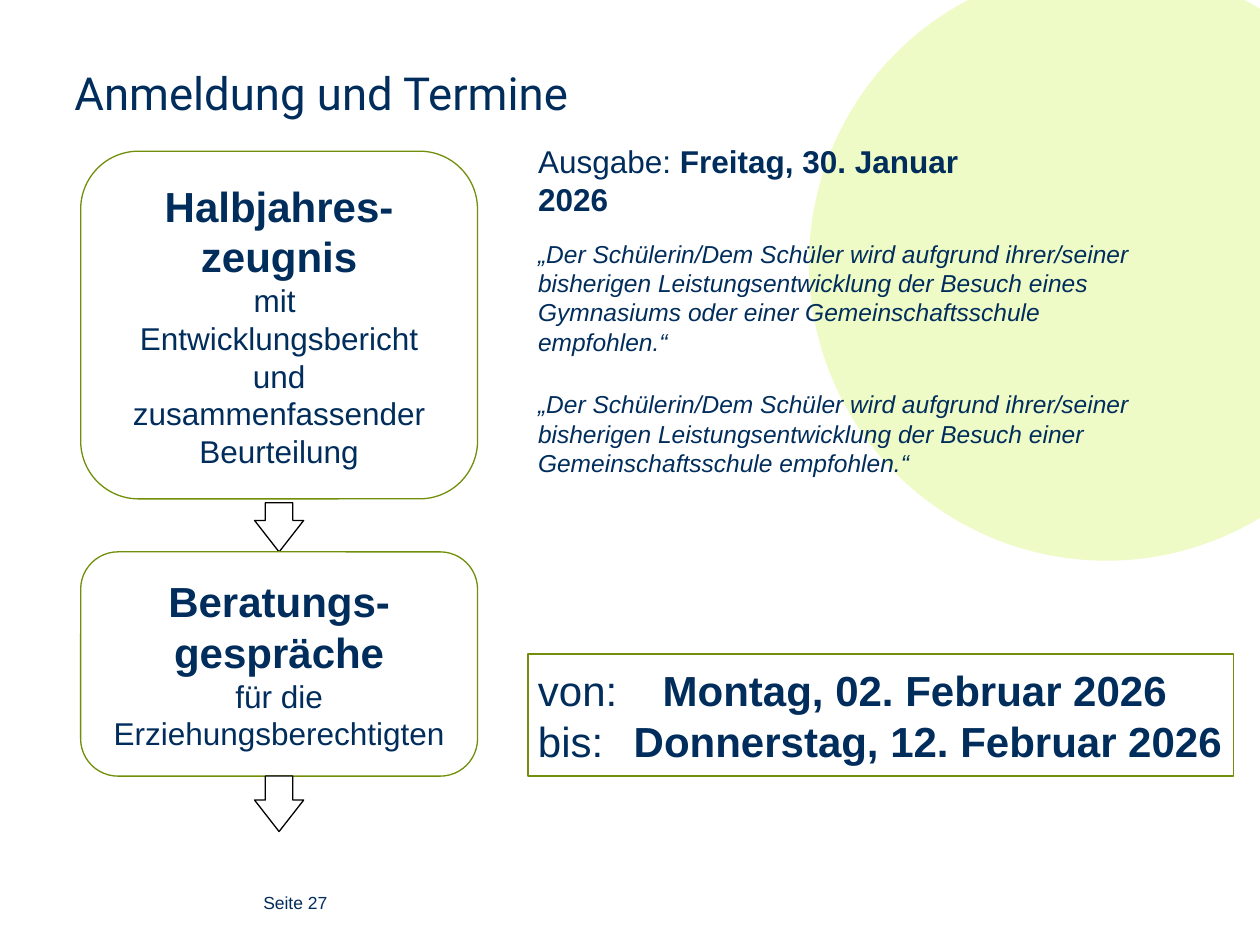
from lxml import etree
from pptx import Presentation
from pptx.dml.color import RGBColor
from pptx.enum import shapes, text
from pptx.oxml.ns import qn
from pptx.util import Inches, Pt

NAVY, GREEN, LIME, WHITE, BLACK = "002D5B", "718F0A", "EFFBC6", "FFFFFF", "000000"
KIND = shapes.MSO_SHAPE
LEFT, CENTER = text.PP_ALIGN.LEFT, text.PP_ALIGN.CENTER


def color(value):
    return RGBColor.from_string(value)


def add_figure(page, kind, box, fill, line=None):
    shape = page.shapes.add_shape(kind, *map(Inches, box))
    shape.shadow.inherit = False
    shape.fill.solid()
    shape.fill.fore_color.rgb = color(fill)
    if line:
        shape.line.color.rgb = color(line)
        shape.line.width = Pt(0.75)
    else:
        shape.line.fill.background()
    return shape


def add_label(page, box):
    return page.shapes.add_textbox(*map(Inches, box))


def prepare_frame(shape, inset=(0.08, 0.08), anchor=text.MSO_ANCHOR.MIDDLE):
    frame = shape.text_frame
    frame.word_wrap = True
    frame.vertical_anchor = anchor
    frame.margin_left = frame.margin_right = Inches(inset[0])
    frame.margin_top = frame.margin_bottom = Inches(inset[1])
    return frame


def next_para(frame, align=LEFT, tab=None):
    para = frame.paragraphs[0]
    if para.runs:
        para = frame.add_paragraph()
    para.alignment = align
    if tab:
        stops = etree.SubElement(para._p.get_or_add_pPr(), qn("a:tabLst"))
        etree.SubElement(stops, qn("a:tab"), pos=str(Inches(tab)), algn="l")
    return para


def write(para, words, size=18, bold=False, italic=False, font="Arial"):
    for index, line in enumerate(words.split("\n")):
        if index:
            para.add_line_break()
        span = para.add_run()
        span.text = line
        span.font.name = font
        span.font.size = Pt(size)
        span.font.bold = bold
        span.font.italic = italic
        span.font.color.rgb = color(NAVY)


def add_title(page, box):
    frame = prepare_frame(add_label(page, box), (0, 0), text.MSO_ANCHOR.TOP)
    para = next_para(frame)
    para.line_spacing = 0.85
    write(para, "Anmeldung und Termine", size=26, font="Roboto")


def add_step(page, box, heading, detail, inset, arrow_gap, arrow_height):
    left, top, width, height = box
    frame = prepare_frame(add_figure(page, KIND.ROUNDED_RECTANGLE, box, WHITE, GREEN), (0.04, inset))
    write(next_para(frame, CENTER), heading, size=24, bold=True)
    write(next_para(frame, CENTER), detail)
    arrow_width = 0.39
    arrow_box = (left + (width - arrow_width) / 2, top + height + arrow_gap, arrow_width, arrow_height)
    arrow = add_figure(page, KIND.DOWN_ARROW, arrow_box, WHITE, BLACK)
    arrow.adjustments[0] = 0.56
    arrow.adjustments[1] = 0.64


def add_issue_date(page, box):
    para = next_para(prepare_frame(add_label(page, box)))
    write(para, "Ausgabe: ")
    write(para, "Freitag, 30. Januar 2026", bold=True)


def add_quotes(page, box, pitch, schools):
    left, top, width, height = box
    for index, school in enumerate(schools):
        frame = prepare_frame(add_label(page, (left, top + index * pitch, width, height)))
        words = (
            "„Der Schülerin/Dem Schüler wird aufgrund ihrer/seiner bisherigen "
            f"Leistungsentwicklung der Besuch {school} empfohlen.“"
        )
        write(next_para(frame), words, size=14, italic=True)


def add_period(page, box, dates):
    frame = prepare_frame(add_figure(page, KIND.RECTANGLE, box, WHITE, GREEN))
    for label, date, tab in dates:
        para = next_para(frame, tab=tab)
        write(para, label + "\t", size=24)
        write(para, date, size=24, bold=True)


def add_footer(page, box):
    frame = prepare_frame(add_label(page, box), (0, 0))
    write(next_para(frame), "Seite 27", size=10)


def main():
    deck = Presentation()
    deck.slide_width, deck.slide_height = Inches(10), Inches(7.5)
    page = deck.slides.add_slide(deck.slide_layouts[6])
    add_footer(page, (2.09, 7.04, 1.26, 0.24))
    add_figure(page, KIND.OVAL, (6.42, -0.27, 4.72, 4.72), LIME)
    add_step(
        page, (0.64, 1.2, 3.15, 2.76), "Halbjahres-zeugnis",
        "mit \nEntwicklungsbericht\nund zusammenfassender Beurteilung",
        inset=0.39, arrow_gap=0.03, arrow_height=0.39,
    )
    add_step(
        page, (0.64, 4.38, 3.15, 1.78), "Beratungs-gespräche",
        "für die Erziehungsberechtigten",
        inset=0.2, arrow_gap=0, arrow_height=0.44,
    )
    add_issue_date(page, (4.19, 1.2, 4.11, 0.46))
    add_quotes(
        page, (4.19, 1.87, 5.11, 0.98), 1.08,
        ("eines Gymnasiums oder einer Gemeinschaftsschule", "einer Gemeinschaftsschule"),
    )
    add_period(
        page, (4.19, 5.19, 5.6, 0.97),
        (("von:", "Montag, 02. Februar 2026", 0.99), ("bis:", "Donnerstag, 12. Februar 2026", 0.76)),
    )
    add_title(page, (0.59, 0.58, 8.82, 0.89))
    deck.save("out.pptx")


if __name__ == "__main__":
    main()
